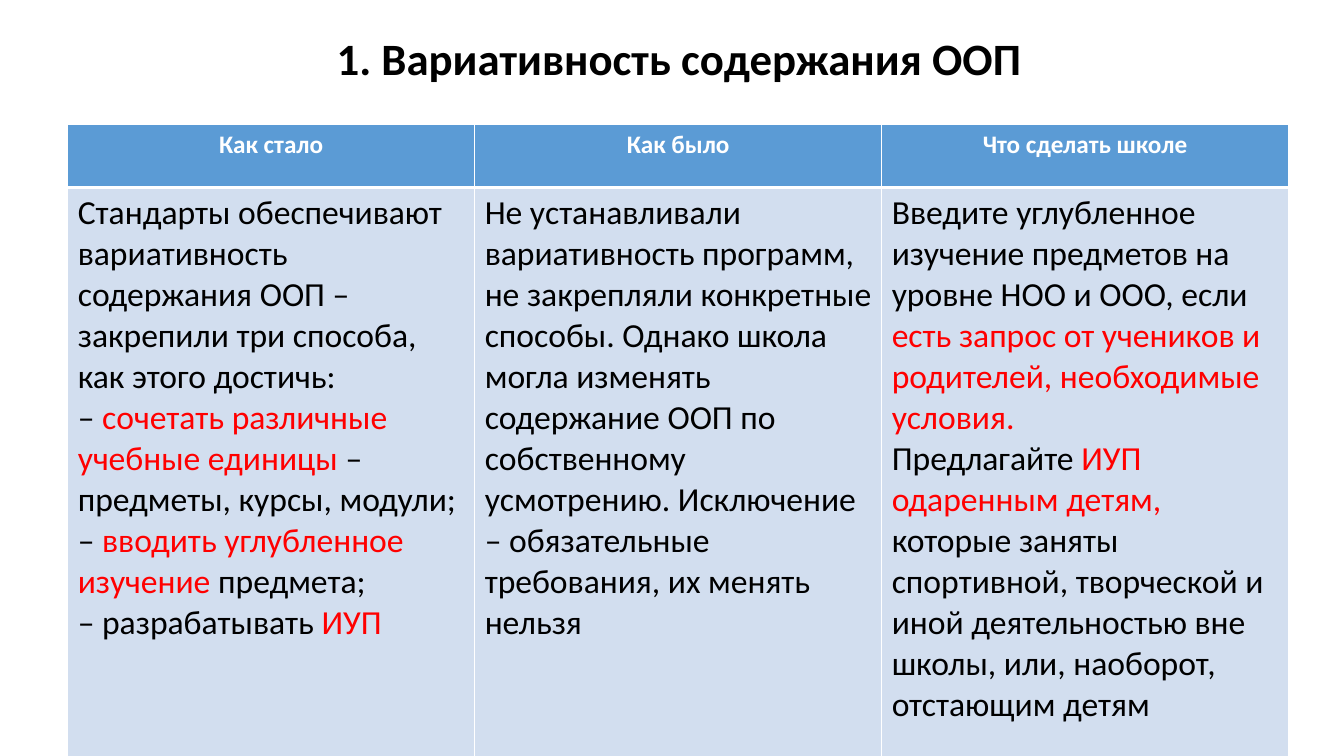
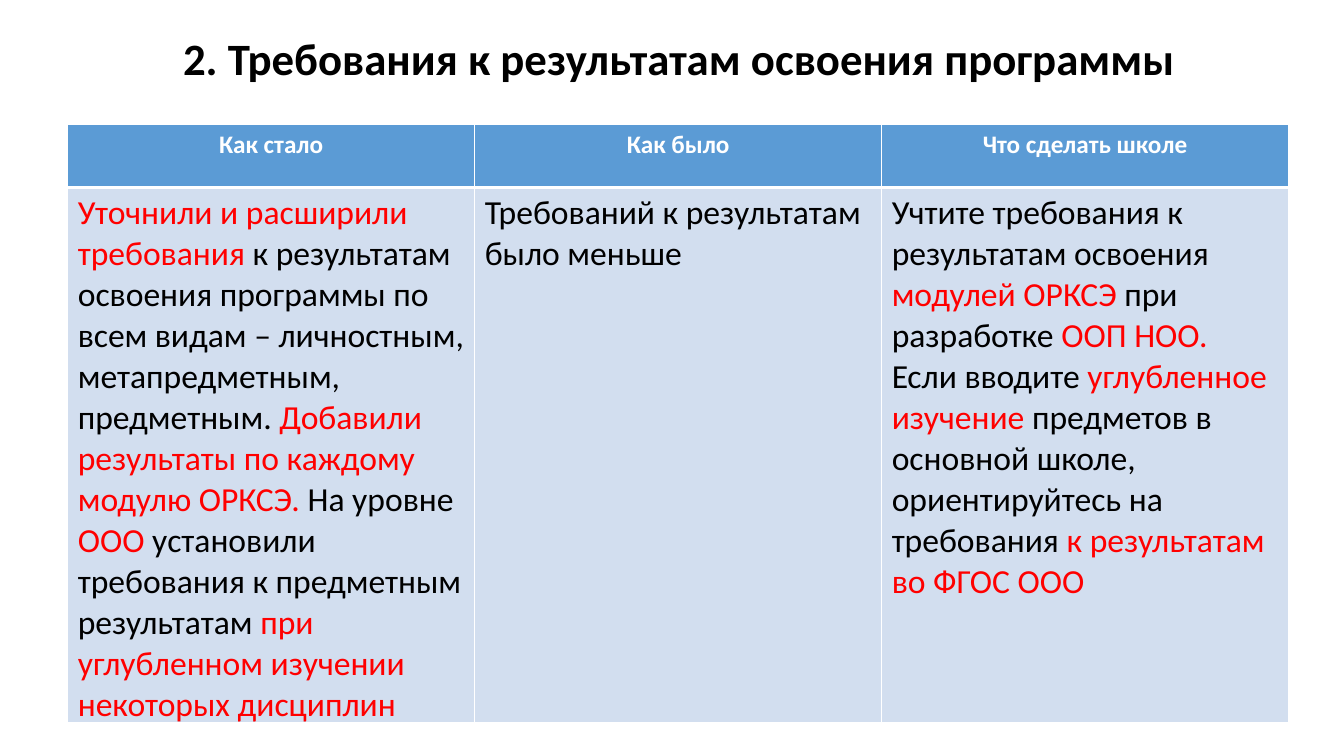
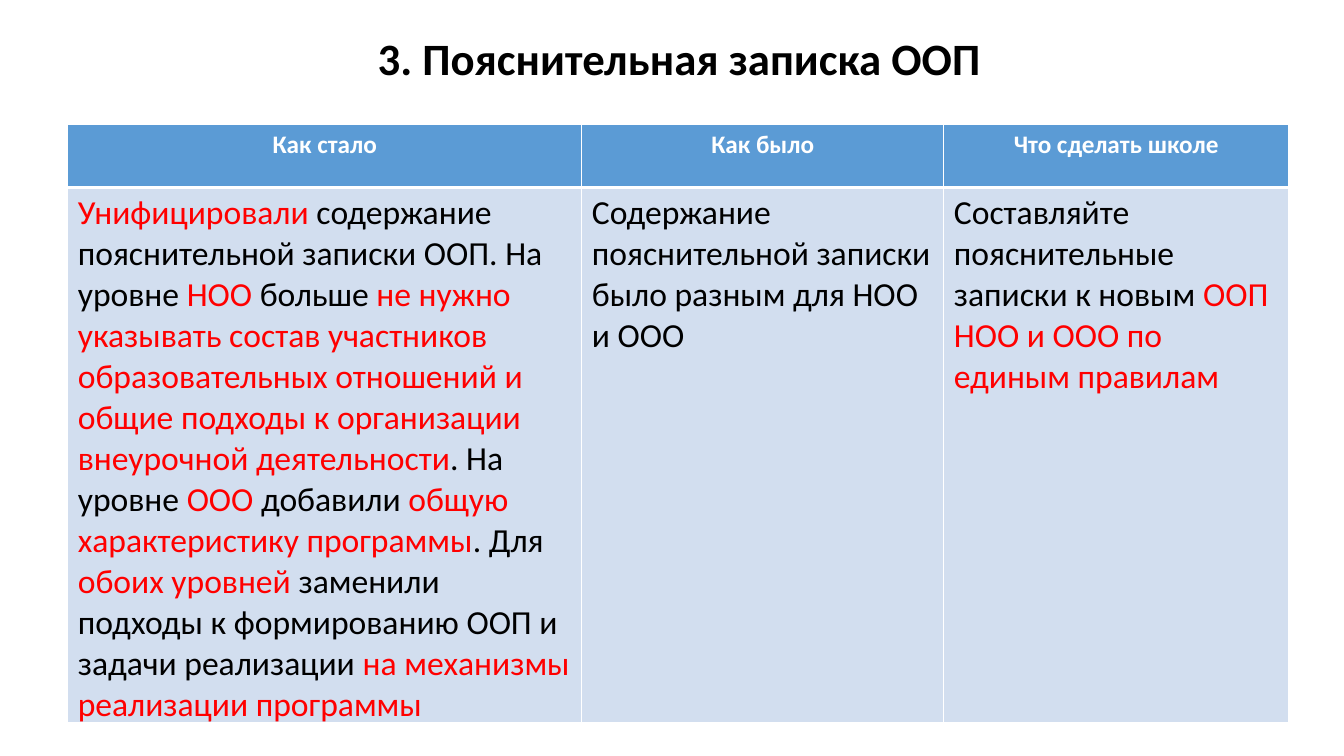
from dataclasses import dataclass

from lxml import etree
from pptx import Presentation
from pptx import util as u
from pptx.dml import color
from pptx.enum import text
from pptx.oxml import ns


@dataclass(frozen=True)
class Theme:
    font: str = "Calibri"
    ink: str = "000000"
    accent: str = "FF0000"
    white: str = "FFFFFF"
    header: str = "5B9BD5"
    body: str = "D2DEEF"
    title_size: int = 32
    header_size: int = 18
    body_size: int = 24
    rule: int = 1
    header_rule: int = 3


THEME = Theme()
HEADINGS = ["Как стало", "Как было", "Что сделать школе"]
HEADER_HEIGHT = 45
EQUAL_COLUMNS = [290.7] * 3

SLIDES = [
    (
        "1. Вариативность содержания ООП",
        EQUAL_COLUMNS,
        410,
        [
            "Стандарты обеспечивают вариативность содержания ООП – "
            "закрепили три способа, как этого достичь:\n"
            "– *сочетать различные учебные единицы *– предметы, курсы, модули;\n"
            "– *вводить углубленное изучение *предмета;\n"
            "– разрабатывать *ИУП*",
            "Не устанавливали вариативность программ, не закрепляли конкретные "
            "способы. Однако школа могла изменять содержание ООП по собственному "
            "усмотрению. Исключение – обязательные требования, их менять нельзя",
            "Введите углубленное изучение предметов на уровне НОО и ООО, если "
            "*есть запрос от учеников и родителей, необходимые условия.*\n"
            "Предлагайте *ИУП одаренным детям, *которые заняты спортивной, "
            "творческой и иной деятельностью вне школы, или, наоборот, "
            "отстающим детям",
        ],
    ),
    (
        "2. Требования к результатам освоения программы",
        EQUAL_COLUMNS,
        382,
        [
            "*Уточнили и расширили требования *к результатам освоения программы "
            "по всем видам – личностным, метапредметным, предметным. "
            "*Добавили результаты по каждому модулю ОРКСЭ. *На уровне *ООО* "
            "установили требования к предметным результатам "
            "*при углубленном изучении некоторых дисциплин*",
            "Требований к результатам было меньше",
            "Учтите требования к результатам освоения *модулей ОРКСЭ *при "
            "разработке *ООП НОО.*\n"
            "Если вводите *углубленное изучение* предметов в основной школе, "
            "ориентируйтесь на требования *к результатам во ФГОС ООО*",
        ],
    ),
    (
        "3. Пояснительная записка ООП",
        [367.2, 258.6, 246.3],
        382,
        [
            "*Унифицировали* содержание пояснительной записки ООП. На уровне "
            "*НОО* больше *не нужно указывать состав участников образовательных "
            "отношений и общие подходы к организации внеурочной деятельности*. "
            "На уровне *ООО* добавили *общую характеристику программы*. Для "
            "*обоих уровней *заменили подходы к формированию ООП и задачи "
            "реализации *на механизмы реализации программы*",
            "Содержание пояснительной записки было разным для НОО и ООО",
            "Составляйте пояснительные записки к новым "
            "*ООП НОО и ООО по единым правилам*",
        ],
    ),
]


def write(tf, content, size, ink, bold=False, align=None, spacing=None):
    for i, line in enumerate(content.split("\n")):
        p = tf.add_paragraph() if i else tf.paragraphs[0]
        p.alignment = align
        p.line_spacing = spacing
        for j, part in enumerate(line.split("*")):
            if part:
                r = p.add_run()
                r.text = part
                r.font.name = THEME.font
                r.font.size = u.Pt(size)
                r.font.bold = bold
                r.font.color.rgb = color.RGBColor.from_string(
                    THEME.accent if j % 2 else ink)


class Deck:
    def __init__(self, theme):
        self.theme = theme
        self.prs = Presentation()
        self.prs.slide_width = u.Pt(960)
        self.prs.slide_height = u.Pt(540)
        self.s = None

    def add_slide(self):
        self.s = self.prs.slides.add_slide(self.prs.slide_layouts[6])

    def title(self, content):
        sp = self.s.shapes.add_textbox(u.Pt(71.3), u.Pt(5.8), u.Pt(828), u.Pt(75))
        tf = sp.text_frame
        tf.word_wrap = True
        tf.vertical_anchor = text.MSO_ANCHOR.MIDDLE
        write(tf, content, self.theme.title_size, self.theme.ink, bold=True,
              align=text.PP_ALIGN.CENTER, spacing=0.9)

    def borders(self, cell, top, bottom):
        tc_pr = cell._tc.get_or_add_tcPr()
        rule = self.theme.rule
        for side, width in zip("LRTB", (rule, rule, top, bottom)):
            ln = etree.SubElement(tc_pr, ns.qn(f"a:ln{side}"), w=str(u.Pt(width)))
            fill = etree.SubElement(ln, ns.qn("a:solidFill"))
            etree.SubElement(fill, ns.qn("a:srgbClr"), val=self.theme.white)

    def cell(self, cell, content, fill, top, bottom, **style):
        self.borders(cell, top, bottom)
        cell.fill.solid()
        cell.fill.fore_color.rgb = color.RGBColor.from_string(fill)
        write(cell.text_frame, content, **style)

    def table(self, answers, widths, body_height):
        t = self.theme
        heights = (HEADER_HEIGHT, body_height)
        table = self.s.shapes.add_table(
            len(heights), len(widths), u.Pt(48.4), u.Pt(88.9),
            u.Pt(sum(widths)), u.Pt(sum(heights))).table
        table.first_row = table.horz_banding = False
        for row, height in zip(table.rows, heights):
            row.height = u.Pt(height)
        for i, width in enumerate(widths):
            table.columns[i].width = u.Pt(width)
            self.cell(table.cell(0, i), HEADINGS[i], t.header, t.rule, t.header_rule,
                      size=t.header_size, ink=t.white, bold=True,
                      align=text.PP_ALIGN.CENTER)
            self.cell(table.cell(1, i), answers[i], t.body, t.header_rule, t.rule,
                      size=t.body_size, ink=t.ink)


def main():
    deck = Deck(THEME)
    for title, widths, body_height, answers in SLIDES:
        deck.add_slide()
        deck.title(title)
        deck.table(answers, widths, body_height)
    deck.prs.save("out.pptx")


if __name__ == "__main__":
    main()
